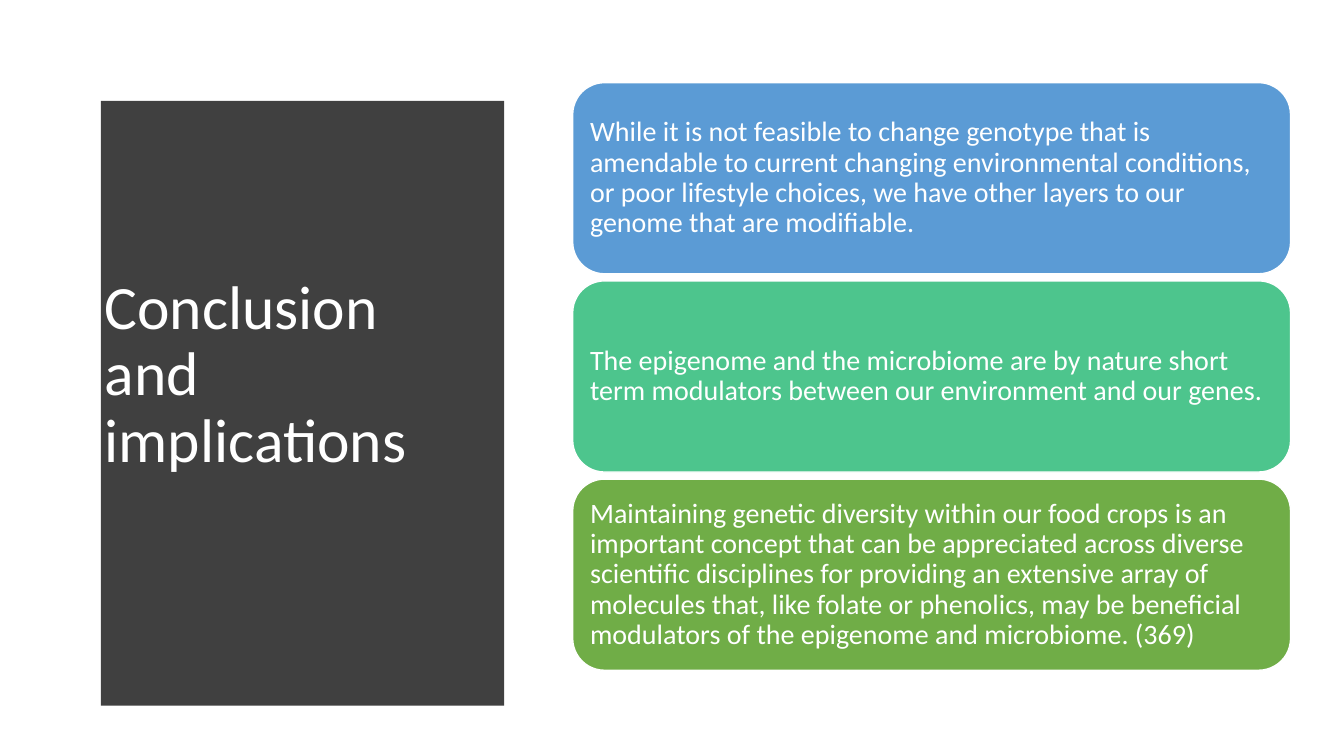
from pptx import Presentation
from pptx.dml.color import RGBColor
from pptx.enum.shapes import MSO_SHAPE
from pptx.enum.text import MSO_ANCHOR, PP_ALIGN
from pptx.util import Inches, Pt

WHITE = RGBColor(0xFF, 0xFF, 0xFF)
CHARCOAL = RGBColor(0x40, 0x40, 0x40)
BLUE = RGBColor(0x5B, 0x9B, 0xD5)
TEAL = RGBColor(0x4D, 0xC5, 0x8D)
GREEN = RGBColor(0x70, 0xAD, 0x47)

TITLE = "Conclusion and implications"
POINTS = [
    ("While it is not feasible to change genotype that is amendable to current "
     "changing environmental conditions, or poor lifestyle choices, we have "
     "other layers to our genome that are modifiable.", BLUE),
    ("The epigenome and the microbiome are by nature short term modulators "
     "between our environment and our genes.", TEAL),
    ("Maintaining genetic diversity within our food crops is an important "
     "concept that can be appreciated across diverse scientific disciplines "
     "for providing an extensive array of molecules that, like folate or "
     "phenolics, may be beneficial modulators of the epigenome and "
     "microbiome. (369)", GREEN),
]


def set_text(shape, text, size):
    tf = shape.text_frame
    tf.word_wrap = True
    tf.vertical_anchor = MSO_ANCHOR.MIDDLE
    tf.text = text
    p = tf.paragraphs[0]
    p.alignment = PP_ALIGN.LEFT
    p.line_spacing = 0.9
    font = p.runs[0].font
    font.name, font.size, font.color.rgb = "Calibri", Pt(size), WHITE
    return tf


def add_title_panel(s, left, top, width, height, bulge=0.24, steps=48):
    # Panel whose right edge bows outwards as a parabola
    edge = []
    for i in range(steps + 1):
        t = 2 * i / steps - 1
        edge.append((left + width - bulge * t * t, top + height * i / steps))
    builder = s.shapes.build_freeform(left, top, scale=Inches(1))
    builder.add_line_segments(edge + [(left, top + height)], close=True)
    panel = builder.convert_to_shape()
    panel.shadow.inherit = False
    panel.fill.solid()
    panel.fill.fore_color.rgb = CHARCOAL
    panel.line.fill.background()

    # Title
    box = s.shapes.add_textbox(Inches(left + 0.41), Inches(top + 0.59),
                               Inches(width - 1.05), Inches(height - 1.2))
    set_text(box, TITLE, 44)


def add_point_cards(s, left, top, width, height, gap=0.07):
    card_height = (height - gap * (len(POINTS) - 1)) / len(POINTS)
    for i, (text, color) in enumerate(POINTS):
        card = s.shapes.add_shape(
            MSO_SHAPE.ROUNDED_RECTANGLE,
            Inches(left), Inches(top + i * (card_height + gap)),
            Inches(width), Inches(card_height))
        card.shadow.inherit = False
        card.fill.solid()
        card.fill.fore_color.rgb = color
        card.line.color.rgb = WHITE
        card.line.width = Pt(1)
        tf = set_text(card, text, 20)
        tf.margin_left = tf.margin_right = Inches(0.08)
        tf.margin_top = tf.margin_bottom = Inches(0.08)


def main():
    prs = Presentation()
    prs.slide_width, prs.slide_height = Inches(13.33), Inches(7.5)
    s = prs.slides.add_slide(prs.slide_layouts[6])
    add_title_panel(s, 0.53, 0.52, 4.79, 6.44)
    add_point_cards(s, 5.68, 0.82, 7.12, 5.83)
    prs.save("out.pptx")


if __name__ == "__main__":
    main()
